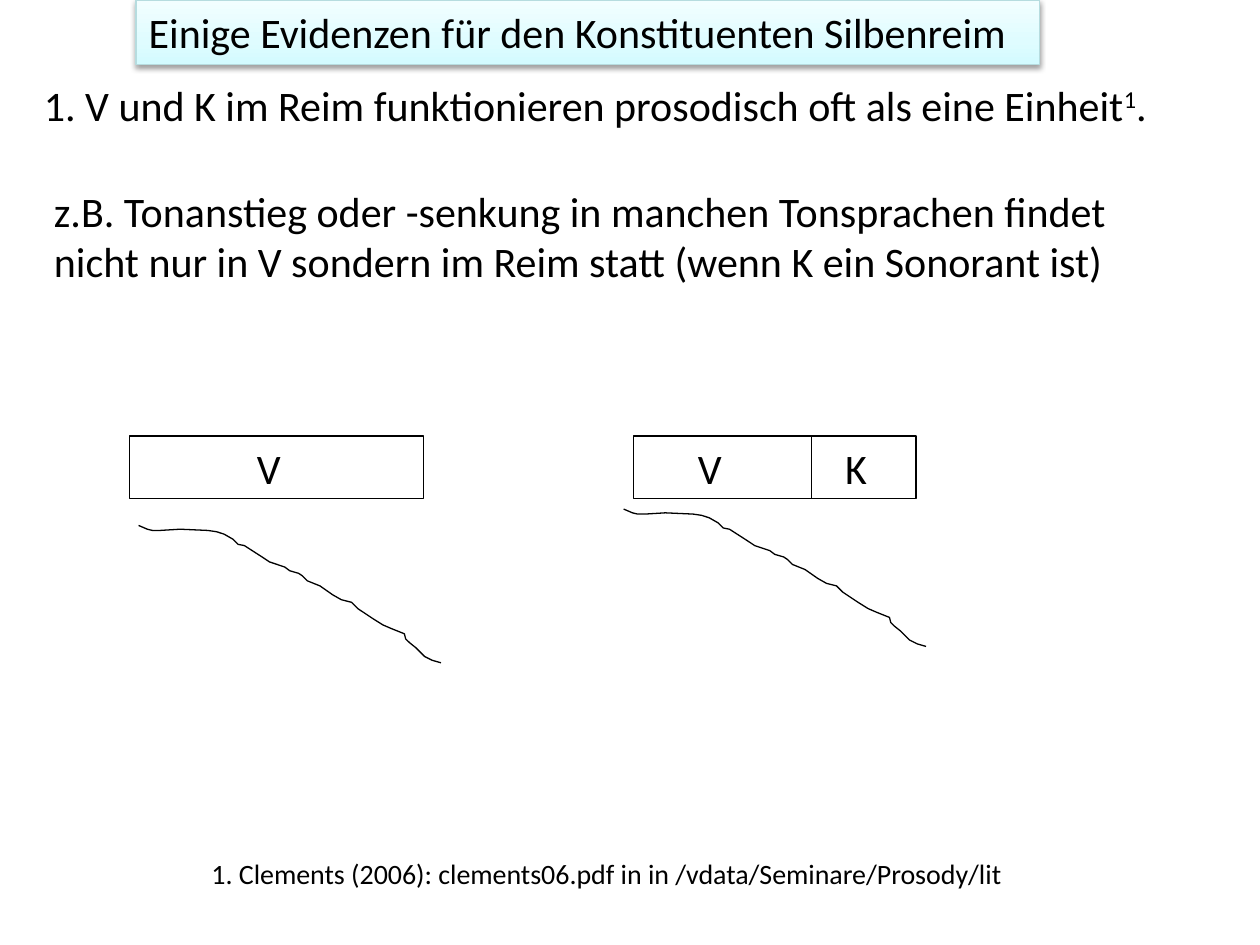
from copy import deepcopy
from dataclasses import dataclass

from lxml.etree import SubElement
from pptx import Presentation
from pptx.dml.color import RGBColor
from pptx.enum.text import MSO_ANCHOR, MSO_AUTO_SIZE, PP_ALIGN
from pptx.enum.shapes import MSO_SHAPE
from pptx.oxml.ns import qn
from pptx.util import Inches, Pt


@dataclass(frozen=True)
class Theme:
    """Colours, font and type sizes of the slide."""
    font: str = "Calibri"
    ink: RGBColor = RGBColor(0, 0, 0)
    title_line: RGBColor = RGBColor(0xB6, 0xDC, 0xDF)
    title_fill: tuple = ((0, "D3FBFF"), (0.35, "DFFCFF"), (1, "F2FEFF"))
    body: Pt = Pt(24)
    note: Pt = Pt(16)
    line: Pt = Pt(0.75)


THEME = Theme()
LABEL_HEIGHT = 0.51
TONE_FALL = (
    (0, 0), (0.07, 0.03), (0.11, 0.04), (0.17, 0.04), (0.33, 0.03), (0.55, 0.04),
    (0.62, 0.05), (0.68, 0.07), (0.75, 0.11), (0.79, 0.15), (0.84, 0.16),
    (0.98, 0.25), (1.04, 0.29), (1.16, 0.33), (1.20, 0.36), (1.27, 0.38),
    (1.30, 0.40), (1.34, 0.44), (1.44, 0.48), (1.54, 0.55), (1.61, 0.59),
    (1.69, 0.61), (1.74, 0.66), (1.86, 0.74), (1.94, 0.79), (2.01, 0.82),
    (2.11, 0.86), (2.12, 0.90), (2.15, 0.93), (2.20, 0.97), (2.27, 1.04),
    (2.33, 1.07), (2.40, 1.09),
)


def place(shape, box):
    """Move a shape to a box given in inches."""
    shape.left, shape.top, shape.width, shape.height = map(Inches, box)


def style_text(shape, size, fit=MSO_AUTO_SIZE.SHAPE_TO_FIT_TEXT):
    """Format all text of a shape in the theme font."""
    frame = shape.text_frame
    frame.word_wrap = True
    frame.auto_size = fit
    frame.vertical_anchor = MSO_ANCHOR.TOP
    for para in frame.paragraphs:
        para.alignment = PP_ALIGN.LEFT
        for span in para.runs:
            span.font.name = THEME.font
            span.font.size = size
            span.font.color.rgb = THEME.ink


def add_text(page, box, text, size=THEME.body, superscript="", ending=""):
    """Add a text box, optionally with a superscript and an ending."""
    shape = page.shapes.add_textbox(*map(Inches, box))
    shape.text_frame.text = text
    para = shape.text_frame.paragraphs[0]
    if superscript:
        raised = para.add_run()
        raised.text = superscript
        raised.font._element.set("baseline", "30000")
        para.add_run().text = ending
    style_text(shape, size)


def add_title(page, box, text):
    """Format the title as a shadowed gradient bar of fixed height."""
    title = page.shapes.title
    place(title, box)
    title.text_frame.text = text
    style_text(title, THEME.body, MSO_AUTO_SIZE.NONE)
    title.fill.gradient()
    title.fill.gradient_angle = 90
    stops = title._element.spPr.find(".//" + qn("a:gsLst"))
    stops.insert(1, deepcopy(stops[0]))
    for stop, (position, colour) in zip(title.fill.gradient_stops, THEME.title_fill):
        stop.position = position
        stop.color.rgb = RGBColor.from_string(colour)
    title.line.color.rgb = THEME.title_line
    title.line.width = THEME.line
    title.shadow.inherit = False
    effects = title._element.spPr.find(qn("a:effectLst"))
    shadow = SubElement(effects, qn("a:outerShdw"), blurRad="40000", dist="20000",
                        dir="5400000", rotWithShape="0")
    colour = SubElement(shadow, qn("a:srgbClr"), val="000000")
    SubElement(colour, qn("a:alpha"), val="38000")


def outline(shape):
    """Leave only a thin outline on a shape."""
    shape.shadow.inherit = False
    shape.fill.background()
    shape.line.color.rgb = THEME.ink
    shape.line.width = THEME.line


def add_segment(page, box, letter, label_left, label_width):
    """Add a sound segment with its letter."""
    segment = page.shapes.add_shape(MSO_SHAPE.RECTANGLE, *map(Inches, box))
    outline(segment)
    add_text(page, (label_left, box[1], label_width, LABEL_HEIGHT), letter)


def add_tone(page, left, top):
    """Draw the falling tone contour from its starting point."""
    points = [(Inches(left + x), Inches(top + y)) for x, y in TONE_FALL]
    builder = page.shapes.build_freeform(*points[0])
    builder.add_line_segments(points[1:], close=False)
    outline(builder.convert_to_shape())


def add_rhyme(page, left, top, segments, tone):
    """Add adjoining segments above a falling tone."""
    for width, letter, label_offset, label_width in segments:
        add_segment(page, (left, top, width, 0.5), letter, left + label_offset, label_width)
        left += width
    add_tone(page, *tone)


def main():
    """Build the slide and save it."""
    deck = Presentation()
    deck.slide_width, deck.slide_height = Inches(10), Inches(7.5)
    page = deck.slides.add_slide(deck.slide_layouts[5])
    add_title(page, (1.08, 0, 7.17, 0.51), "Einige Evidenzen für den Konstituenten Silbenreim")
    add_text(page, (0.25, 0.58, 9.42, 0.51),
             "1. V und K im Reim funktionieren prosodisch oft als eine Einheit",
             superscript="1", ending=".")
    add_text(page, (0.33, 1.42, 8.67, 0.91),
             "z.B. Tonanstieg oder -senkung in manchen Tonsprachen findet "
             "nicht nur in V sondern im Reim statt (wenn K ein Sonorant ist)")
    add_rhyme(page, 1.03, 3.46, [(2.33, "V", 0.91, 0.58)], (1.1, 4.17))
    add_rhyme(page, 5.03, 3.46, [(1.41, "V", 0.41, 0.58), (0.83, "K", 0.17, 0.5)], (4.95, 4.04))
    add_text(page, (1.58, 6.75, 6.67, 0.37),
             "1. Clements (2006): clements06.pdf in in /vdata/Seminare/Prosody/lit", THEME.note)
    deck.save("out.pptx")


if __name__ == "__main__":
    main()
